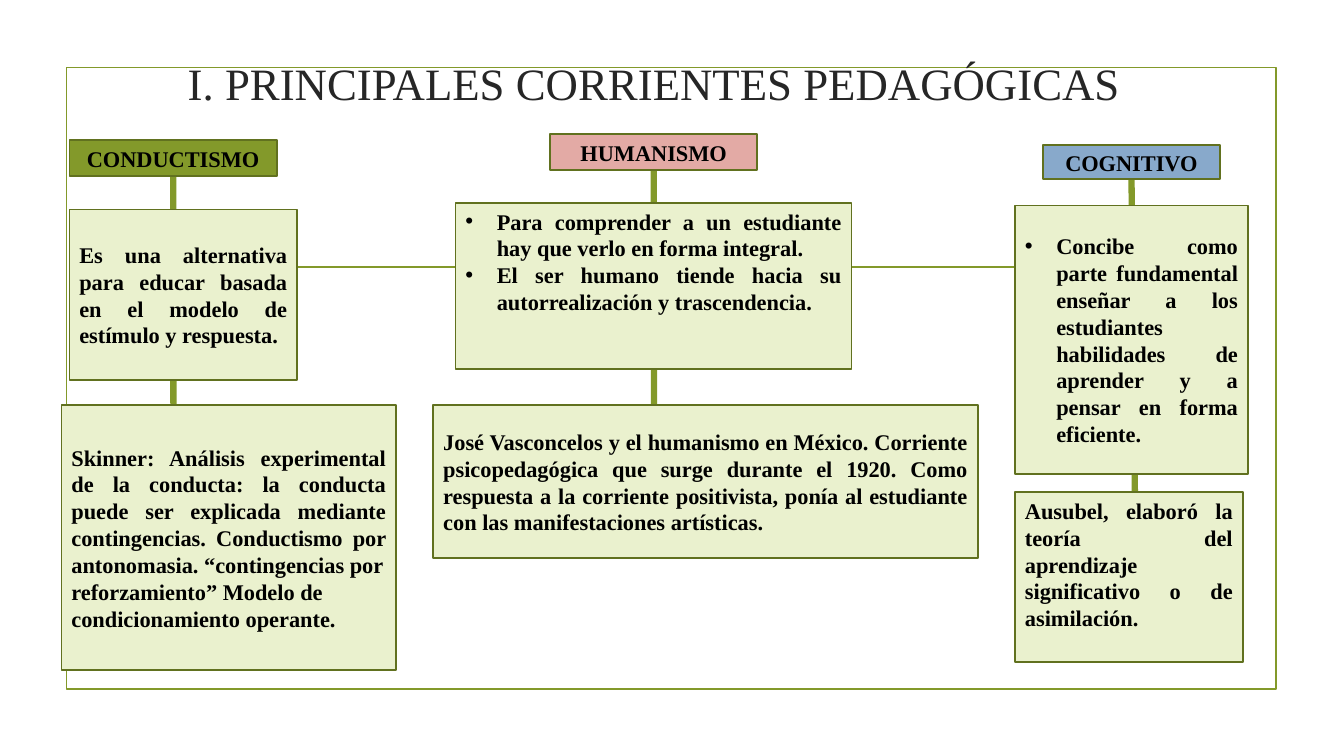
from dataclasses import dataclass

from lxml import etree
from pptx import Presentation
from pptx.dml.color import RGBColor
from pptx.enum.shapes import MSO_CONNECTOR, MSO_SHAPE
from pptx.enum.text import MSO_ANCHOR, PP_ALIGN
from pptx.oxml.ns import qn
from pptx.util import Cm, Pt

STRAIGHT = MSO_CONNECTOR.STRAIGHT
RECTANGLE = MSO_SHAPE.RECTANGLE
TOP, MIDDLE = MSO_ANCHOR.TOP, MSO_ANCHOR.MIDDLE
CENTER, JUSTIFY = PP_ALIGN.CENTER, PP_ALIGN.JUSTIFY
BOTTOM_SIDE = 2

FONT = "Times New Roman"
GREEN, DARK_GREEN, PALE_GREEN = "83992A", "61711F", "EAF1CE"
BULLET_INDENT = Cm(0.79)


@dataclass
class Box:
    left: float
    top: float
    width: float
    height: float
    paragraphs: list[str]
    fill: str = PALE_GREEN
    align: PP_ALIGN = JUSTIFY
    anchor: MSO_ANCHOR = MIDDLE
    bulleted: bool = False

    @property
    def bounds(self) -> list[Cm]:
        return [Cm(v) for v in (self.left, self.top, self.width, self.height)]


@dataclass
class School:
    """One column: name, principle and author, threaded on a spine."""
    name: Box
    principle: Box
    author: Box
    spine_end: float


SCHOOLS = [
    School(
        Box(1.75, 3.53, 5.23, 0.91, ["CONDUCTISMO"], GREEN, CENTER),
        Box(1.75, 5.28, 5.74, 4.29, [
            "Es una alternativa para educar basada en el modelo de estímulo y respuesta."]),
        Box(1.55, 10.21, 8.43, 6.68, [
            "Skinner: Análisis experimental de la conducta: la conducta puede ser explicada "
            "mediante contingencias. Conductismo por antonomasia. “contingencias por",
            "reforzamiento” Modelo de",
            "condicionamiento operante."]),
        spine_end=4.37),
    School(
        Box(13.87, 3.38, 5.21, 0.91, ["HUMANISMO"], "E3AAA5", CENTER),
        Box(11.48, 5.11, 9.98, 4.19, [
            "Para comprender a un estudiante hay que verlo en forma integral.",
            "El ser humano tiende hacia su autorrealización y trascendencia."],
            anchor=TOP, bulleted=True),
        Box(10.92, 10.21, 13.72, 3.86, [
            "José Vasconcelos y el humanismo en México. Corriente psicopedagógica que surge "
            "durante el 1920. Como respuesta a la corriente positivista, ponía al estudiante "
            "con las manifestaciones artísticas."]),
        spine_end=16.48),
    School(
        Box(26.29, 3.66, 4.45, 0.86, ["COGNITIVO"], "88A9CB", CENTER),
        Box(25.58, 5.18, 5.87, 6.76, [
            "Concibe como parte fundamental enseñar a los estudiantes habilidades de "
            "aprender y a pensar en forma eficiente."], bulleted=True),
        Box(25.58, 12.4, 5.74, 4.29, [
            "Ausubel, elaboró la teoría del aprendizaje significativo o de asimilación."],
            anchor=TOP),
        spine_end=28.6),
]


def color(value: str) -> RGBColor:
    return RGBColor.from_string(value)


def set_line(shape, value: str, width: float) -> None:
    shape.line.color.rgb = color(value)
    shape.line.width = Pt(width)


def add_line(slide, x1: float, y1: float, x2: float, y2: float, width: float):
    line = slide.shapes.add_connector(STRAIGHT, Cm(x1), Cm(y1), Cm(x2), Cm(y2))
    set_line(line, GREEN, width)
    etree.SubElement(line.element.spPr, qn("a:effectLst"))
    return line


def add_bullet(paragraph) -> None:
    properties = paragraph._p.get_or_add_pPr()
    properties.set("marL", str(BULLET_INDENT))
    properties.set("indent", str(-BULLET_INDENT))
    etree.SubElement(properties, qn("a:buFont")).set("typeface", "Arial")
    etree.SubElement(properties, qn("a:buChar")).set("char", "•")


def set_font(paragraph, size: float, value: str, bold: bool) -> None:
    paragraph.font.name = FONT
    paragraph.font.size = Pt(size)
    paragraph.font.bold = bold
    paragraph.font.color.rgb = color(value)


def add_box(slide, box: Box):
    shape = slide.shapes.add_shape(RECTANGLE, *box.bounds)
    shape.shadow.inherit = False
    shape.fill.solid()
    shape.fill.fore_color.rgb = color(box.fill)
    set_line(shape, DARK_GREEN, 1.25)
    frame = shape.text_frame
    frame.word_wrap = True
    frame.vertical_anchor = box.anchor
    for index, text in enumerate(box.paragraphs):
        paragraph = frame.add_paragraph() if index else frame.paragraphs[0]
        paragraph.text = text
        paragraph.alignment = box.align
        if box.bulleted:
            add_bullet(paragraph)
        set_font(paragraph, 16, "000000", True)
    return shape


def add_title(slide, text: str) -> None:
    title = slide.shapes.add_textbox(Cm(3.15), Cm(1.04), Cm(26.67), Cm(2.06))
    frame = title.text_frame
    frame.word_wrap = True
    frame.vertical_anchor = MIDDLE
    paragraph = frame.paragraphs[0]
    paragraph.text = text
    paragraph.alignment = CENTER
    set_font(paragraph, 32, "262626", False)


def main() -> None:
    presentation = Presentation()
    presentation.slide_width, presentation.slide_height = Cm(33.87), Cm(19.05)
    slide = presentation.slides.add_slide(presentation.slide_layouts[6])

    # Border and horizontal rule
    border = slide.shapes.add_shape(RECTANGLE, Cm(1.68), Cm(1.7), Cm(30.48), Cm(15.67))
    border.shadow.inherit = False
    border.fill.background()
    set_line(border, GREEN, 1.25)
    add_line(slide, 3.89, 6.73, 30, 6.73, 1.25)

    add_title(slide, "I. PRINCIPALES CORRIENTES PEDAGÓGICAS")

    # Schools, each spine running behind its boxes
    for school in SCHOOLS:
        spine = add_line(slide, school.spine_end, school.name.top,
                         school.spine_end, school.author.top, 4.5)
        name = add_box(slide, school.name)
        spine.begin_connect(name, BOTTOM_SIDE)
        add_box(slide, school.principle)
        add_box(slide, school.author)

    presentation.save("out.pptx")


if __name__ == "__main__":
    main()
